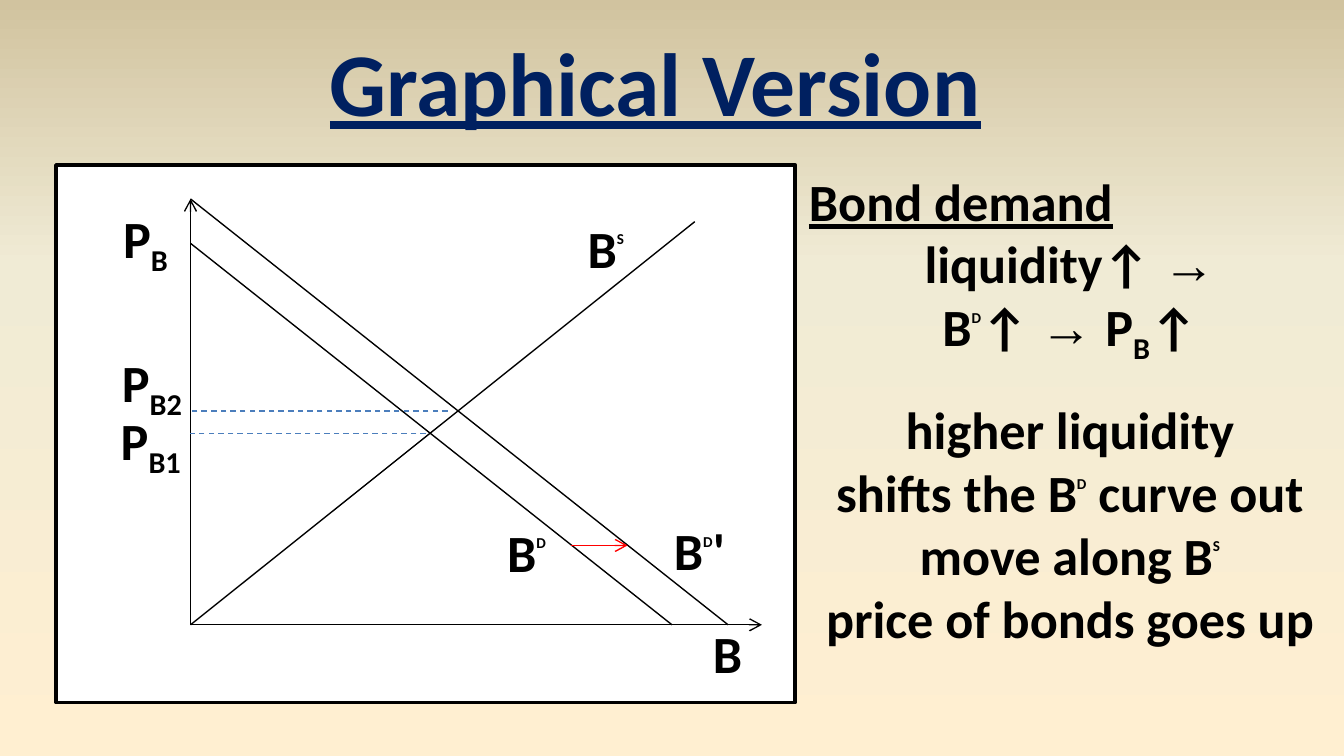
"""Build a slide on how higher liquidity shifts the bond demand curve."""
import dataclasses

import pptx
import pptx.dml.color
import pptx.enum.dml
import pptx.enum.shapes
import pptx.enum.text
import pptx.oxml
import pptx.oxml.ns
import pptx.util

Cm = pptx.util.Cm
Pt = pptx.util.Pt
ALIGN = pptx.enum.text.PP_ALIGN


@dataclasses.dataclass(frozen=True)
class Theme:
    font: str = "Calibri"
    arrow_font: str = "Times New Roman"
    title: str = "002060"
    ink: str = "000000"
    paper: str = "FFFFFF"
    guide: str = "4B7EBC"
    shift: str = "FF0000"
    backdrop: tuple = ((0, "FFEFD1"), (65, "F0EBD5"), (100, "D1C39F"))
    title_size: int = 48
    text_size: int = 28
    super_size: int = 14
    gap: int = 17
    curve_width: float = 0.75
    frame_width: float = 2


THEME = Theme()


def rgb(code):
    return pptx.dml.color.RGBColor.from_string(code)


def plain(text):
    return text, {}


def sup(text):
    return text, {"size": THEME.super_size, "baseline": 90}


def sub(text):
    return text, {"baseline": -25}


def implies(text):
    return text, {"font": THEME.arrow_font}


def paint_background(slide):
    stops = "".join(
        f'<a:gs pos="{position * 1000}"><a:srgbClr val="{code}"/></a:gs>'
        for position, code in THEME.backdrop
    )
    background = pptx.oxml.parse_xml(
        f'<p:bg {pptx.oxml.ns.nsdecls("p", "a")}><p:bgPr>'
        f'<a:gradFill rotWithShape="1"><a:gsLst>{stops}</a:gsLst>'
        '<a:lin ang="16200000" scaled="0"/></a:gradFill>'
        "<a:effectLst/></p:bgPr></p:bg>"
    )
    slide.element.cSld.insert(0, background)


def add_run(paragraph, text, size=THEME.text_size, font=THEME.font,
            color=THEME.ink, baseline=0, underline=False):
    run = paragraph.add_run()
    run.text = text
    run.font.size = Pt(size)
    run.font.name = font
    run.font.bold = True
    run.font.color.rgb = rgb(color)
    if underline:
        run.font.underline = True
    if baseline:
        run.font._element.set("baseline", str(baseline * 1000))


def add_text(shapes, box, lines, wrap=True):
    """Each line is (alignment, space before in points, runs)."""
    frame = shapes.add_textbox(*map(Cm, box)).text_frame
    frame.word_wrap = wrap
    frame.auto_size = pptx.enum.text.MSO_AUTO_SIZE.SHAPE_TO_FIT_TEXT
    for index, (alignment, before, runs) in enumerate(lines):
        paragraph = frame.add_paragraph() if index else frame.paragraphs[0]
        paragraph.alignment = alignment
        if before:
            paragraph.space_before = Pt(before)
        for text, style in runs:
            add_run(paragraph, text, **style)


def add_label(shapes, left, top, width, *runs):
    add_text(shapes, (left, top, width, 1.45), [(ALIGN.CENTER, 0, runs)])


def add_line(shapes, start, end, color=THEME.ink, arrow=False, dashed=False):
    connector = shapes.add_connector(
        pptx.enum.shapes.MSO_CONNECTOR.STRAIGHT, *map(Cm, (*start, *end)))
    connector.line.color.rgb = rgb(color)
    connector.line.width = Pt(THEME.curve_width)
    if dashed:
        connector.line.dash_style = pptx.enum.dml.MSO_LINE.DASH
    properties = connector.element.spPr
    if arrow:
        properties.find(pptx.oxml.ns.qn("a:ln")).append(pptx.oxml.parse_xml(
            f'<a:tailEnd {pptx.oxml.ns.nsdecls("a")} type="arrow"/>'))
    properties.append(pptx.oxml.parse_xml(
        f'<a:effectLst {pptx.oxml.ns.nsdecls("a")}/>'))


def add_frame(shapes, box):
    frame = shapes.add_shape(
        pptx.enum.shapes.MSO_SHAPE.RECTANGLE, *map(Cm, box))
    frame.shadow.inherit = False
    frame.fill.solid()
    frame.fill.fore_color.rgb = rgb(THEME.paper)
    frame.line.color.rgb = rgb(THEME.ink)
    frame.line.width = Pt(THEME.frame_width)


def add_bond_market(slide):
    market = slide.shapes.add_group_shape().shapes
    price_axis, quantity_axis, axis_top = 3.6, 11.81, 3.76
    origin = (price_axis, quantity_axis)

    add_frame(market, (1.06, 3.12, 13.97, 10.16))
    add_label(market, 1.9, 3.78, 1.7, plain("P"), sub("B"))
    add_label(market, 1.9, 7.59, 1.9, plain("P"), sub("B1"))
    add_label(market, 1.7, 6.5, 2.34, plain("P"), sub("B2"))

    add_line(market, origin, (price_axis, axis_top), arrow=True)
    add_line(market, origin, (14.4, quantity_axis), arrow=True)
    for demand_top, demand_foot in ((4.6, 12.7), (axis_top, 13.76)):
        add_line(market, (price_axis, demand_top), (demand_foot, quantity_axis))
    add_line(market, (13.13, 4.19), origin)
    for quantity, price in ((8.05, 8.2), (8.46, 7.77)):
        add_line(market, (quantity, price), (price_axis, price),
                 THEME.guide, dashed=True)
    add_line(market, (10.8, 10.31), (11.86, 10.31), THEME.shift, arrow=True)

    add_label(market, 12.27, 9.68, 1.9, plain("B"), sup("D"), plain("'"))
    add_label(market, 12.9, 11.61, 1.7, plain("B"))
    add_label(market, 9.1, 9.7, 1.7, plain("B"), sup("D"))
    add_label(market, 10.6, 3.96, 1.7, plain("B"), sup("S"))


def add_title(slide):
    style = {"size": THEME.title_size, "color": THEME.title, "underline": True}
    add_text(slide.shapes, (5.92, 0.38, 12.93, 2.31),
             [(ALIGN.CENTER, 0, [("Graphical Version", style)])], wrap=False)


def add_explanation(slide):
    add_text(slide.shapes, (15.04, 3.07, 10.36, 9.25), [
        (ALIGN.LEFT, 0, [("Bond demand", {"underline": True})]),
        (ALIGN.CENTER, 0, [plain("liquidity↑"), implies(" →")]),
        (ALIGN.CENTER, 0, [plain("B"), sup("D"), plain("↑ "), implies("→ "),
                           plain("P"), sub("B"), plain("↑")]),
        (ALIGN.CENTER, THEME.gap, [plain("higher liquidity")]),
        (ALIGN.CENTER, 0, [plain("shifts the B"), sup("D"),
                           plain(" curve out")]),
        (ALIGN.CENTER, 0, [plain("move along B"), sup("S")]),
        (ALIGN.CENTER, 0, [plain("price of bonds goes up")]),
    ])


def main():
    presentation = pptx.Presentation()
    presentation.slide_width = Cm(25.4)
    presentation.slide_height = Cm(14.29)
    slide = presentation.slides.add_slide(presentation.slide_layouts[6])
    paint_background(slide)
    add_title(slide)
    add_explanation(slide)
    add_bond_market(slide)
    presentation.save("out.pptx")


if __name__ == "__main__":
    main()
